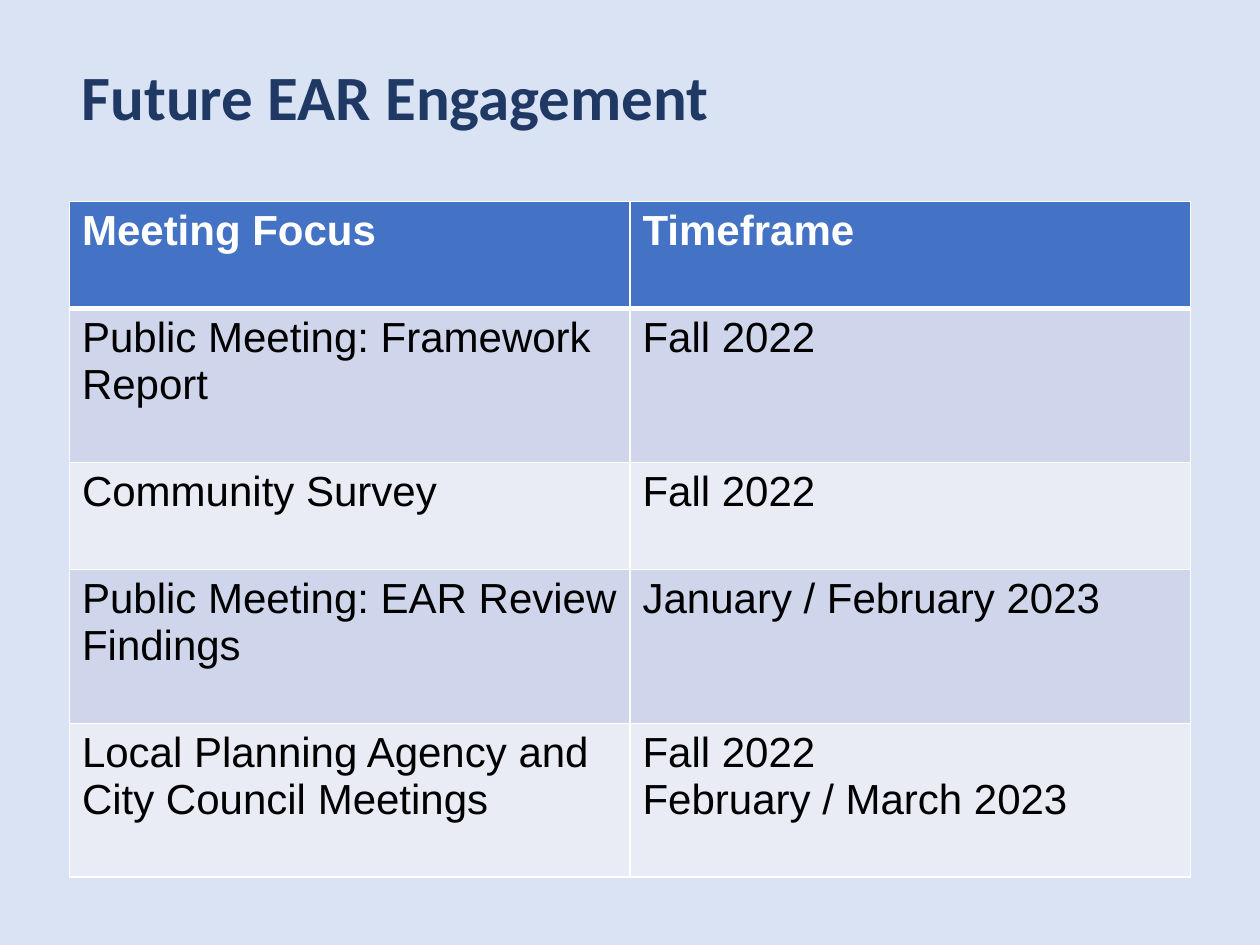
from dataclasses import dataclass

from lxml import etree
from pptx import Presentation
from pptx.dml.color import RGBColor
from pptx.enum.text import MSO_ANCHOR
from pptx.oxml.ns import qn
from pptx.slide import Slide
from pptx.table import _Cell
from pptx.text.text import TextFrame
from pptx.util import Cm, Pt

MIDDLE = MSO_ANCHOR.MIDDLE
TOP = MSO_ANCHOR.TOP


@dataclass(frozen=True)
class Theme:
    background: str = "DAE3F3"
    title: str = "203864"
    header: str = "4472C4"
    bands: tuple[str, str] = ("CFD5EA", "E9EBF5")
    white: str = "FFFFFF"
    black: str = "000000"
    title_font: str = "Calibri"
    table_font: str = "Arial"
    title_size: int = 36
    table_size: int = 24
    thin: int = 1
    thick: int = 3


@dataclass(frozen=True)
class Meeting:
    focus: str
    timeframe: str
    height: float


THEME = Theme()
LEFT, WIDTH = 1.4, 22.6
SHORT, TALL = 2.16, 3.1
MEETINGS = [
    Meeting("Meeting Focus", "Timeframe", SHORT),
    Meeting("Public Meeting: Framework Report", "Fall 2022", TALL),
    Meeting("Community Survey", "Fall 2022", SHORT),
    Meeting("Public Meeting: EAR Review Findings", "January / February 2023", TALL),
    Meeting("Local Planning Agency and City Council Meetings",
            "Fall 2022\nFebruary / March 2023", TALL),
]


def write_text(frame: TextFrame, text: str, *, font: str, size: int, color: str,
               bold: bool = False, line_spacing: float = 1.0) -> None:
    for index, line in enumerate(text.split("\n")):
        para = frame.add_paragraph() if index else frame.paragraphs[0]
        para.line_spacing = line_spacing
        span = para.add_run()
        span.text = line
        span.font.name = font
        span.font.size = Pt(size)
        span.font.bold = bold
        span.font.color.rgb = RGBColor.from_string(color)


def draw_borders(cell: _Cell, top: int, bottom: int) -> None:
    properties = cell._tc.get_or_add_tcPr()
    widths = {"L": THEME.thin, "R": THEME.thin, "T": top, "B": bottom}
    for side, width in widths.items():
        line = etree.SubElement(properties, qn(f"a:ln{side}"), w=str(Pt(width)))
        fill = etree.SubElement(line, qn("a:solidFill"))
        etree.SubElement(fill, qn("a:srgbClr"), val=THEME.white)


def draw_title(page: Slide, text: str) -> None:
    box = page.shapes.add_textbox(Cm(LEFT), Cm(0.33), Cm(WIDTH), Cm(3.38))
    frame = box.text_frame
    frame.word_wrap = True
    frame.vertical_anchor = MIDDLE
    write_text(frame, text, font=THEME.title_font, size=THEME.title_size,
               color=THEME.title, bold=True, line_spacing=0.9)


def draw_schedule(page: Slide, meetings: list[Meeting]) -> None:
    height = sum(meeting.height for meeting in meetings)
    table = page.shapes.add_table(len(meetings), 2, Cm(LEFT), Cm(4.06),
                                  Cm(WIDTH), Cm(height)).table
    for column in table.columns:
        column.width = Cm(WIDTH / 2)
    for row, meeting in enumerate(meetings):
        table.rows[row].height = Cm(meeting.height)
        is_header = row == 0
        shade = THEME.header if is_header else THEME.bands[(row - 1) % 2]
        for column, text in enumerate((meeting.focus, meeting.timeframe)):
            cell = table.cell(row, column)
            draw_borders(cell, top=THEME.thick if row == 1 else THEME.thin,
                         bottom=THEME.thick if is_header else THEME.thin)
            cell.fill.solid()
            cell.fill.fore_color.rgb = RGBColor.from_string(shade)
            cell.vertical_anchor = TOP
            write_text(cell.text_frame, text, font=THEME.table_font,
                       size=THEME.table_size, bold=is_header,
                       color=THEME.white if is_header else THEME.black)


def main() -> None:
    deck = Presentation()
    deck.slide_width, deck.slide_height = Cm(25.4), Cm(19.05)
    page = deck.slides.add_slide(deck.slide_layouts[6])
    page.background.fill.solid()
    page.background.fill.fore_color.rgb = RGBColor.from_string(THEME.background)
    draw_title(page, "Future EAR Engagement")
    draw_schedule(page, MEETINGS)
    deck.save("out.pptx")


if __name__ == "__main__":
    main()
